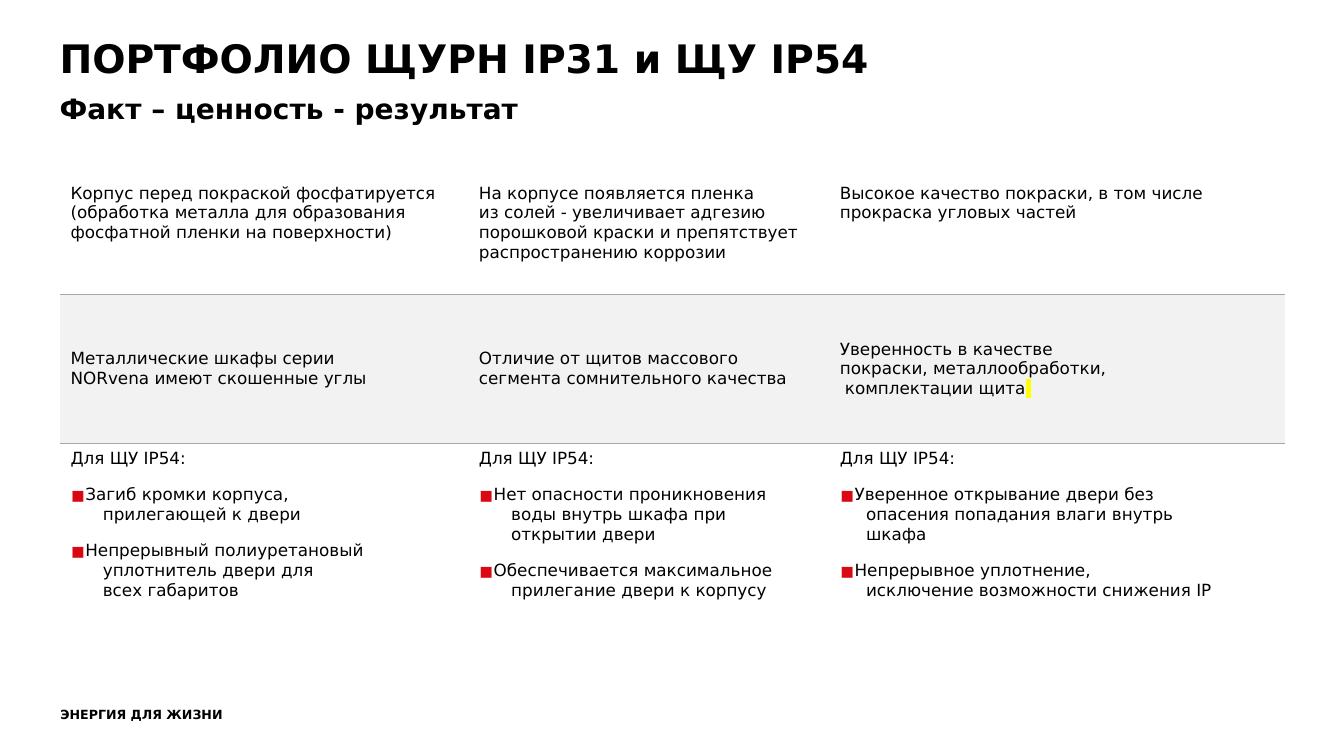
from copy import deepcopy
from dataclasses import dataclass

from lxml import etree
from pptx import Presentation, util as u
from pptx.dml import color
from pptx.enum import text
from pptx.oxml import ns

BLACK = color.RGBColor(0x00, 0x00, 0x00)
BAND = color.RGBColor(0xF2, 0xF2, 0xF2)
RULE = color.RGBColor(0xA6, 0xA6, 0xA6)
RED = color.RGBColor(0xDA, 0x08, 0x12)
YELLOW = color.RGBColor(0xFF, 0xFF, 0x00)
FONT = "DejaVu Sans"

COLUMN_WIDTHS = (4.05, 3.58, 4.52)
ROW_HEIGHTS = (1.15, 1.48, 1.52)
TABLE_HEIGHT = 4.63
BAND_ROW = 1


@dataclass(frozen=True)
class Line:
    """A paragraph; \\v breaks the line and \\t moves to the tab stop."""
    words: str
    size: float = 12
    bold: bool = False
    space_before: float = 0
    line_spacing: float = 1.0
    bullet: bool = False
    tab: float = 0
    marked_end: bool = False


def item(words: str, tab: float = 0.32) -> Line:
    return Line(words, space_before=12, bullet=True, tab=tab)


HEADING = [
    Line("ПОРТФОЛИО ЩУРН IP31 и ЩУ IP54", 28, True, line_spacing=0.9),
    Line("Факт – ценность - результат", 20, True, 10, 0.9),
]
MOTTO = [Line("ЭНЕРГИЯ ДЛЯ ЖИЗНИ", 9, True)]
SCOPE = Line("Для ЩУ IP54:")
ROWS = [
    [
        [Line("Корпус перед покраской фосфатируется (обработка металла "
              "для образования фосфатной пленки на поверхности)")],
        [Line("На корпусе появляется пленка\vиз солей - увеличивает адгезию "
              "порошковой краски и препятствует распространению коррозии")],
        [Line("Высокое качество покраски, в том числе прокраска угловых частей")],
    ],
    [
        [Line("Металлические шкафы серии\vNORvena имеют скошенные углы")],
        [Line("Отличие от щитов массового\vсегмента сомнительного качества")],
        [Line("Уверенность в качестве\vпокраски, металлообработки,\v\tкомплектации щита",
              tab=0.05, marked_end=True)],
    ],
    [
        [SCOPE,
         item("Загиб кромки корпуса,\v\tприлегающей к двери"),
         item("Непрерывный полиуретановый\v\tуплотнитель двери для\v\tвсех габаритов")],
        [SCOPE,
         item("Нет опасности проникновения\v\tводы внутрь шкафа при\v\tоткрытии двери"),
         item("Обеспечивается максимальное\v\tприлегание двери к корпусу")],
        [SCOPE,
         item("Уверенное открывание двери без\v\tопасения попадания влаги внутрь\v\tшкафа", 0.26),
         item("Непрерывное уплотнение,\v\tисключение возможности снижения IP", 0.26)],
    ],
]


def add_child(parent, tag: str, **attributes):
    values = {name: str(value) for name, value in attributes.items()}
    return etree.SubElement(parent, ns.qn(tag), values)


def add_bullet(para) -> None:
    props = para._p.get_or_add_pPr()
    props.set("marL", "0")
    props.set("indent", str(u.Inches(-0.31)))
    add_child(add_child(props, "a:buClr"), "a:srgbClr", val=RED)
    add_child(props, "a:buSzPct", val=130000)
    add_child(props, "a:buFont", typeface=FONT)
    add_child(props, "a:buChar", char="▪")


def add_tab_stop(para, position: float) -> None:
    stops = add_child(para._p.get_or_add_pPr(), "a:tabLst")
    add_child(stops, "a:tab", pos=u.Inches(position), algn="l")


def highlight(span) -> None:
    """Mark a run in yellow; the mark follows the fill in the run properties."""
    mark = etree.Element(ns.qn("a:highlight"))
    add_child(mark, "a:srgbClr", val=YELLOW)
    span._r.get_or_add_rPr().find(ns.qn("a:solidFill")).addnext(mark)


def write_line(para, line: Line) -> None:
    para.text = line.words
    para.alignment = text.PP_ALIGN.LEFT
    para.space_before = u.Pt(line.space_before)
    para.line_spacing = line.line_spacing
    if line.bullet:
        add_bullet(para)
    if line.tab:
        add_tab_stop(para, line.tab)
    if line.marked_end:
        para.add_run().text = " "
    look = {"name": FONT, "size": u.Pt(line.size), "bold": line.bold}
    for span in para.runs:
        for name, value in look.items():
            setattr(span.font, name, value)
        span.font.color.rgb = BLACK
    for line_break in para._p.findall(ns.qn("a:br")):
        line_break.append(deepcopy(para.runs[0]._r.rPr))
    if line.marked_end:
        highlight(para.runs[-1])


def write(frame, lines: list[Line]) -> None:
    for index, line in enumerate(lines):
        write_line(frame.add_paragraph() if index else frame.paragraphs[0], line)


def place(box, left: float, top: float, width: float, height: float) -> None:
    sides = {"left": left, "top": top, "width": width, "height": height}
    for name, value in sides.items():
        setattr(box, name, u.Inches(value))


def add_rule(cell, tag: str) -> None:
    props = cell._tc.get_or_add_tcPr()
    rule = add_child(props, tag, w=u.Pt(1))
    add_child(add_child(rule, "a:solidFill"), "a:srgbClr", val=RULE)
    props.insert(0, rule)


def format_cell(cell, row: int) -> None:
    if row == BAND_ROW:
        cell.fill.solid()
        cell.fill.fore_color.rgb = BAND
        cell.vertical_anchor = text.MSO_ANCHOR.MIDDLE
    else:
        cell.fill.background()
        cell.vertical_anchor = text.MSO_ANCHOR.TOP
    if row < len(ROWS) - 1:
        add_rule(cell, "a:lnB")
    if row > 0:
        add_rule(cell, "a:lnT")


def add_benefits(page) -> None:
    holder = page.shapes.add_table(
        len(ROWS), len(COLUMN_WIDTHS), u.Inches(0.6), u.Inches(1.77),
        u.Inches(sum(COLUMN_WIDTHS)), u.Inches(TABLE_HEIGHT))
    table = holder.table
    table.first_row = table.horz_banding = False
    style = table._tbl.tblPr.find(ns.qn("a:tableStyleId"))
    style.text = "{2D5ABB26-0587-4C30-8999-92F81FD0307C}"
    for column, width in zip(table.columns, COLUMN_WIDTHS):
        column.width = u.Inches(width)
    for row, height in zip(table.rows, ROW_HEIGHTS):
        row.height = u.Inches(height)
    holder.height = u.Inches(TABLE_HEIGHT)
    for row, cells in enumerate(ROWS):
        for column, lines in enumerate(cells):
            cell = table.cell(row, column)
            write(cell.text_frame, lines)
            format_cell(cell, row)


def main() -> None:
    deck = Presentation()
    deck.slide_width, deck.slide_height = u.Inches(13.33), u.Inches(7.5)
    page = deck.slides.add_slide(deck.slide_layouts[5])

    title = page.shapes.title
    place(title, 0.49, 0.34, 10.97, 1.06)
    title.text_frame.auto_size = text.MSO_AUTO_SIZE.NONE
    title.text_frame.vertical_anchor = text.MSO_ANCHOR.TOP
    write(title.text_frame, HEADING)

    add_benefits(page)

    motto = page.shapes.add_textbox(0, 0, 0, 0)
    place(motto, 0.5, 6.96, 2.49, 0.25)
    motto.text_frame.word_wrap = True
    write(motto.text_frame, MOTTO)

    deck.save("out.pptx")


if __name__ == "__main__":
    main()
